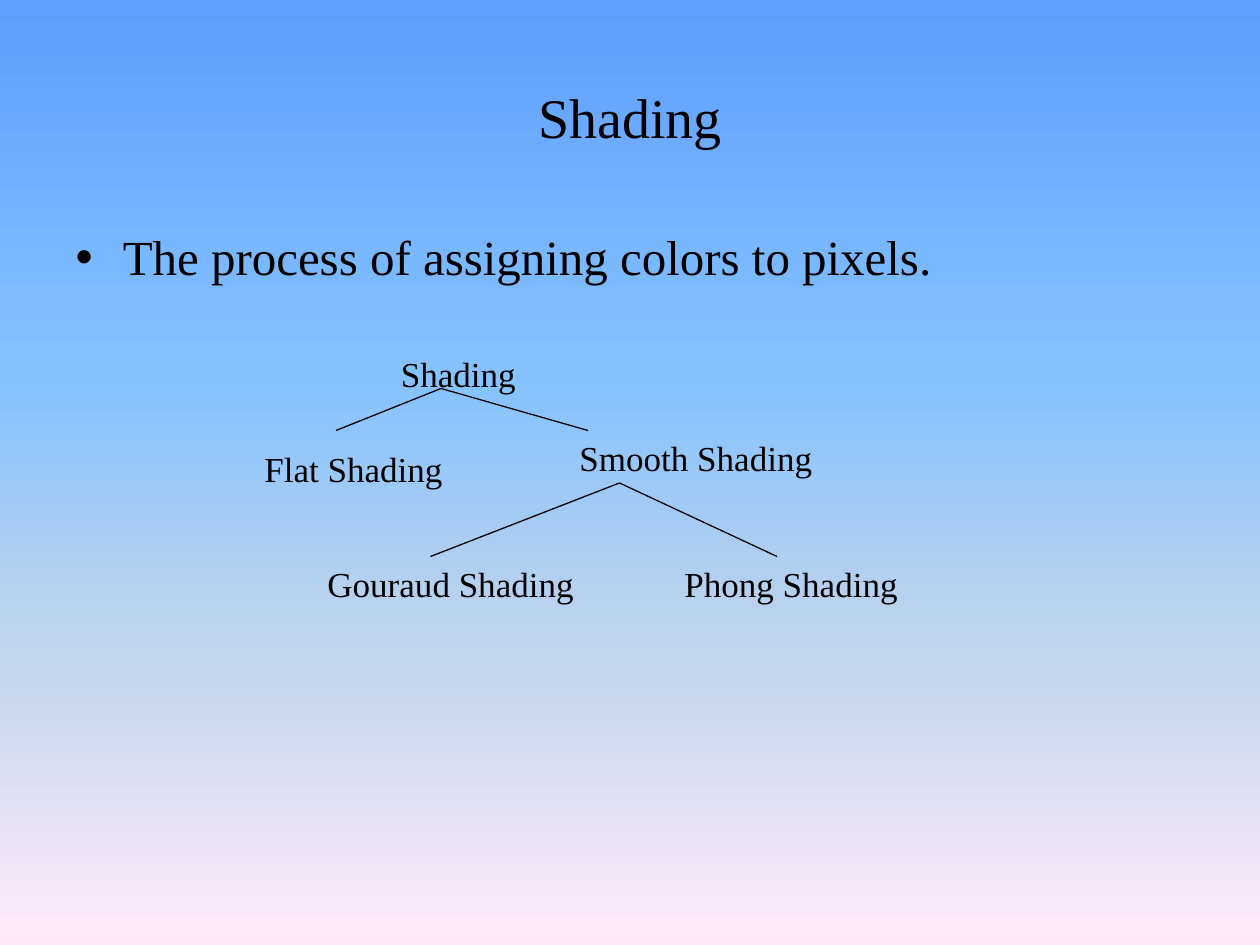
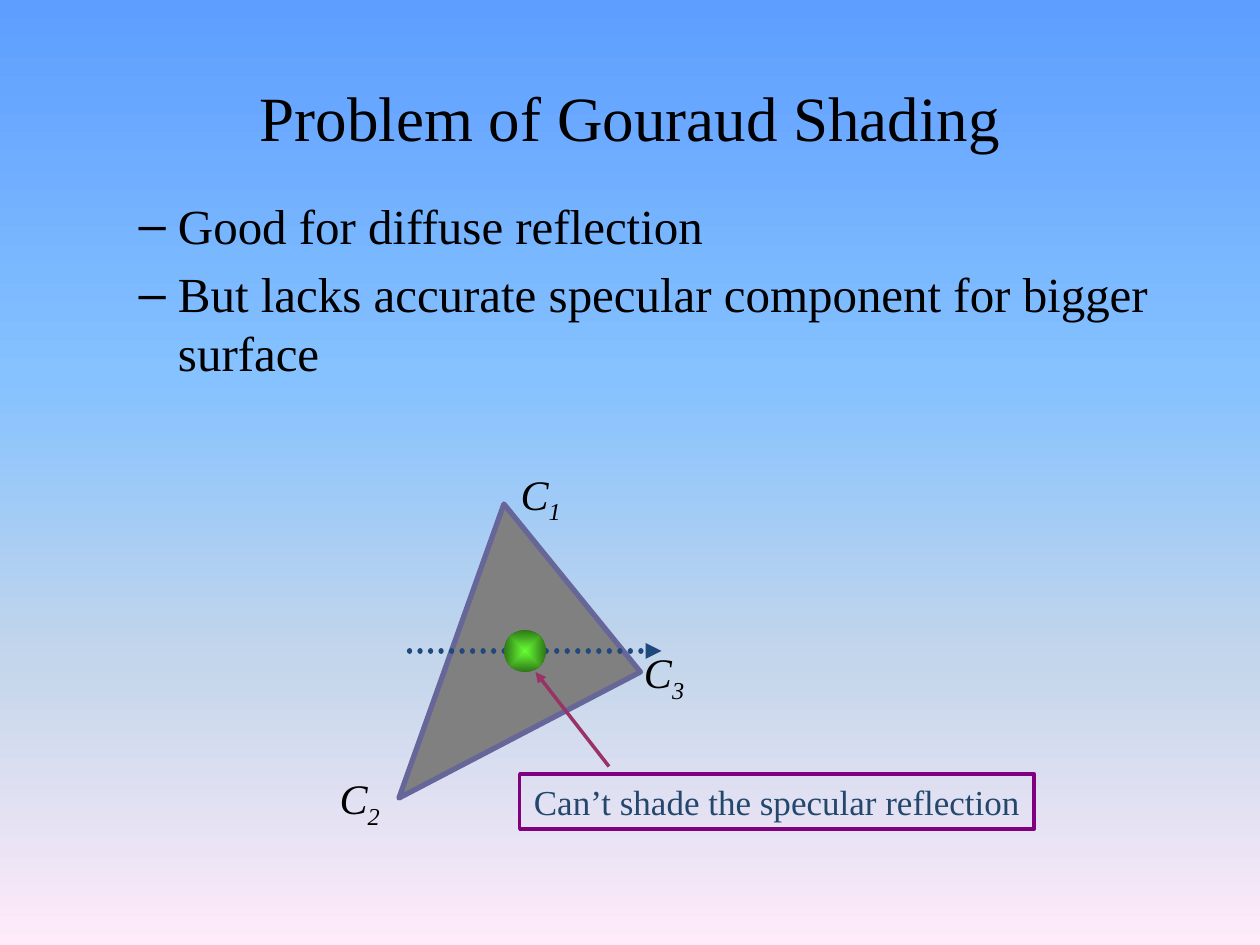
"""Build two slides on shading and the limits of the Gouraud method."""
from dataclasses import dataclass
from lxml.etree import SubElement
from pptx import Presentation
from pptx.dml.color import RGBColor
from pptx.enum.dml import MSO_LINE
from pptx.enum.shapes import MSO_CONNECTOR, MSO_SHAPE
from pptx.enum.text import MSO_ANCHOR, MSO_AUTO_SIZE, PP_ALIGN
from pptx.oxml.ns import qn
from pptx.util import Inches, Pt


@dataclass(frozen=True)
class Theme:
    font: str = "Times New Roman"
    ink: str = "000000"
    sky: tuple = ((0, "5E9EFF"), (40, "85C2FF"), (70, "C4D6EB"), (100, "FFEBFA"))
    face: str = "808080"
    edge: str = "666699"
    scan: str = "1F497D"
    glow: tuple = ("66FF33", "2F7618")
    hint: str = "993366"
    frame: str = "800080"
    note: str = "24486C"
    head: int = 32
    wide: int = 36
    body: int = 28
    mark: int = 24
    small: int = 20


theme = Theme()
rgb = RGBColor.from_string
deck = Presentation()
deck.slide_width, deck.slide_height = Inches(10), Inches(7.5)
cell = deck.slide_width // 120


def write(par, text, size=theme.small, color=theme.ink, italic=None, base=None):
    run = par.add_run()
    run.text = text
    font = run.font
    font.name, font.size, font.italic = theme.font, Pt(size), italic
    font.color.rgb = rgb(color)
    if base:
        run._r.get_or_add_rPr().set("baseline", str(base * 1000))


def link(slide, start, end, color=theme.ink, width=0.75, dash=None, tip=False):
    ends = [round(cell * n) for n in (*start, *end)]
    item = slide.shapes.add_connector(MSO_CONNECTOR.STRAIGHT, *ends)
    item.line.color.rgb, item.line.width = rgb(color), Pt(width)
    stroke = item.element.xpath(".//a:ln")[0]
    if dash:
        item.line.dash_style = dash
        stroke.set("cap", "rnd")
    if tip:
        SubElement(stroke, qn("a:tailEnd"), type="triangle")
    SubElement(item.element.spPr, qn("a:effectLst"))


master = deck.slide_master
back = master.background.fill
back.gradient()
back.gradient_angle = 270
stops = master.element.xpath("./p:cSld/p:bg//a:gsLst")[0]
for stop in list(stops):
    stops.remove(stop)
for place, color in theme.sky:
    stop = SubElement(stops, qn("a:gs"), pos=str(place * 1000))
    SubElement(stop, qn("a:srgbClr"), val=color)

pages = [
    ("Shading", theme.head, 0, 21, 7,
     ["The process of assigning colors to pixels."]),
    ("Problem of Gouraud Shading", theme.wide, 1, 18, 62.4,
     ["Good for diffuse reflection",
      "But lacks accurate specular component for bigger surface"]),
]
slides = []
for name, size, level, top, tall, points in pages:
    slide = deck.slides.add_slide(deck.slide_layouts[1])
    title, body = slide.placeholders
    for item, row, rows in ((title, 3.6, 15), (body, top, tall)):
        item.left, item.top = cell * 6, round(cell * row)
        item.width, item.height = cell * 108, round(cell * rows)
        item.text_frame.auto_size = MSO_AUTO_SIZE.NONE
    title.text_frame.vertical_anchor = MSO_ANCHOR.MIDDLE
    write(title.text_frame.paragraphs[0], name, size=size)
    for n, point in enumerate(points):
        frame = body.text_frame
        par = frame.add_paragraph() if n else frame.paragraphs[0]
        par.level = level
        write(par, point, size=theme.body)
    slides.append(slide)
tree, flaw = slides

nodes = [("Shading", 37, 33), ("Flat Shading", 24, 42), ("Smooth Shading", 54, 41),
         ("Gouraud Shading", 30, 53), ("Phong Shading", 64, 53)]
for name, col, row in nodes:
    box = tree.shapes.add_textbox(cell * col, cell * row, cell * 28, round(cell * 5.25))
    box.text_frame.word_wrap = True
    write(box.text_frame.paragraphs[0], name)

forks = [((42, 37), (32, 41), (56, 41)), ((59, 46), (41, 53), (74, 53))]
for root, *tips in forks:
    for tip in tips:
        link(tree, root, tip)

path = flaw.shapes.build_freeform(cell * 38, cell * 76, scale=1.0)
path.add_line_segments([(cell * 48, cell * 48), (cell * 61, cell * 64)], close=True)
face = path.convert_to_shape()
face.shadow.inherit = False
face.fill.solid()
face.fill.fore_color.rgb = rgb(theme.face)
face.line.color.rgb, face.line.width = rgb(theme.edge), Pt(3)

for sub, col, row in (("1", 48.25, 44), ("2", 31, 73), ("3", 60, 61)):
    box = flaw.shapes.add_textbox(round(cell * col), cell * row, round(cell * 6.5), cell * 6)
    box.text_frame.word_wrap = False
    par = box.text_frame.paragraphs[0]
    par.alignment = PP_ALIGN.CENTER
    write(par, "C", size=theme.mark, italic=True)
    write(par, sub, size=theme.mark, italic=True, base=-25)

link(flaw, (39, 62), (63, 62), color=theme.scan, width=3, dash=MSO_LINE.ROUND_DOT, tip=True)

ball = flaw.shapes.add_shape(MSO_SHAPE.OVAL, cell * 48, cell * 60, cell * 4, cell * 4)
ball.shadow.inherit = False
ball.line.fill.background()
ball.fill.gradient()
for stop, color, place in zip(ball.fill.gradient_stops, theme.glow, (0, 1)):
    stop.color.rgb, stop.position = rgb(color), place
blend = ball.element.xpath("./p:spPr/a:gradFill")[0]
blend.remove(blend.find(qn("a:lin")))
focus = SubElement(blend, qn("a:path"), path="shape")
SubElement(focus, qn("a:fillToRect"), l="50000", t="50000", r="50000", b="50000")

link(flaw, (58, 73), (51, 64), color=theme.hint, width=2, tip=True)

note = flaw.shapes.add_shape(MSO_SHAPE.RECTANGLE, round(cell * 49.5), round(cell * 73.7),
                             cell * 49, round(cell * 5.25))
note.shadow.inherit = False
note.fill.background()
note.line.color.rgb, note.line.width = rgb(theme.frame), Pt(2)
note.text_frame.word_wrap = False
par = note.text_frame.paragraphs[0]
par.alignment = PP_ALIGN.CENTER
write(par, "Can’t shade the specular reflection", color=theme.note)

deck.save("out.pptx")
